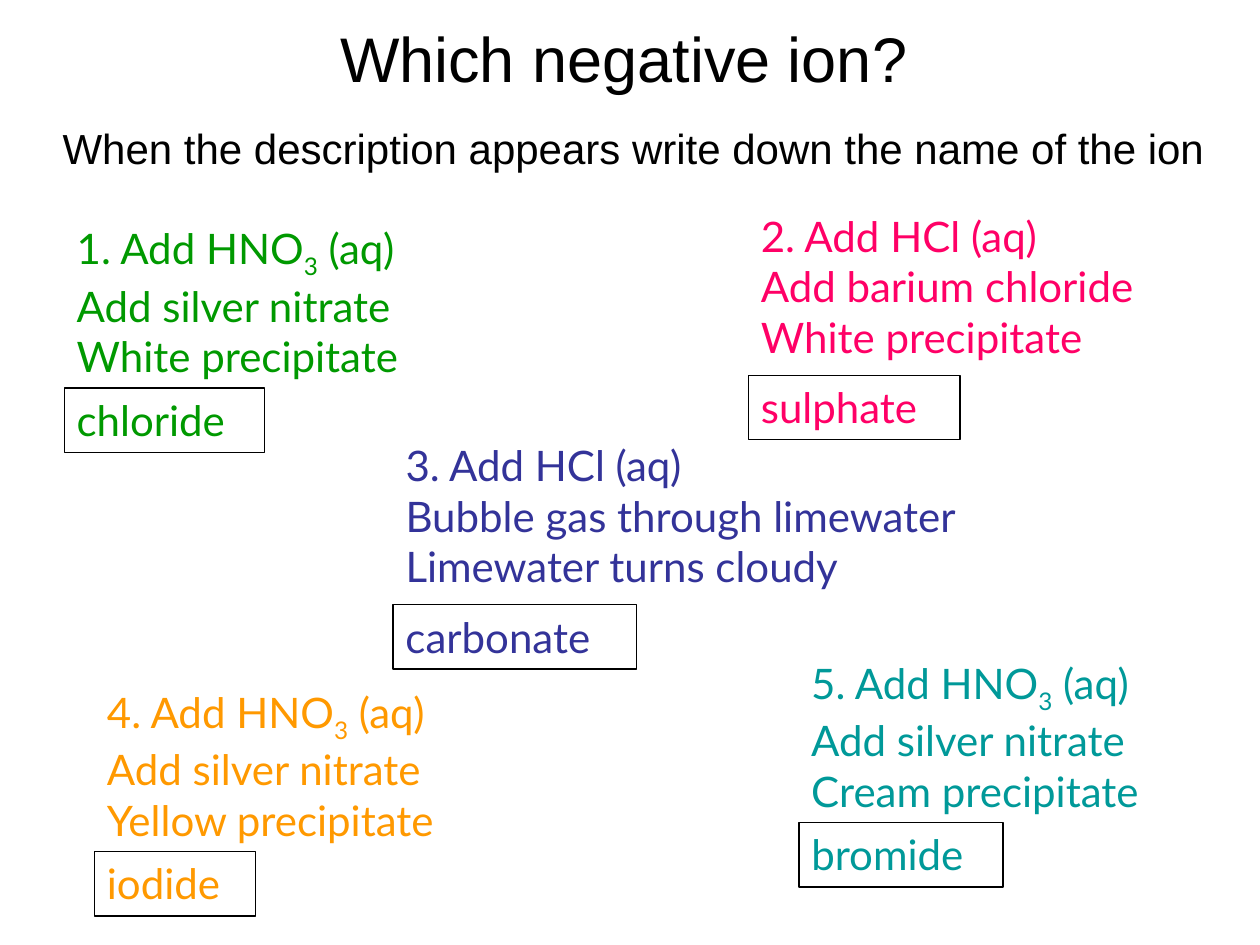
from dataclasses import dataclass

from pptx import Presentation
from pptx.dml.color import RGBColor
from pptx.enum.shapes import MSO_SHAPE
from pptx.enum.text import MSO_ANCHOR, PP_ALIGN
from pptx.util import Inches, Pt


@dataclass(frozen=True)
class Theme:
    black: RGBColor = RGBColor.from_string("000000")
    title_font: str = "Arial"
    body_font: str = "Lato"
    title_size: Pt = Pt(36)
    indent_size: Pt = Pt(40)
    body_size: Pt = Pt(24)
    outline: Pt = Pt(0.75)


THEME = Theme()
CLUE_HEIGHT = 1.31
ANSWER_OFFSET = 1.36
ANSWER_HEIGHT = 0.51
NITRIC_ACID = ("Add HNO", "3", " (aq)")
HYDROCHLORIC_ACID = ("Add HCl (aq)",)

# left, top, clue width, answer width, colour, acid, remaining clue lines, answer
QUESTIONS = [
    (0.51, 1.72, 3.19, 1.59, "009900", NITRIC_ACID,
     ("Add silver nitrate", "White precipitate"), "chloride"),
    (5.94, 1.62, 3.69, 1.68, "FF0066", HYDROCHLORIC_ACID,
     ("Add barium chloride", "White precipitate"), "sulphate"),
    (3.12, 3.44, 5.38, 1.93, "333399", HYDROCHLORIC_ACID,
     ("Bubble gas through limewater", "Limewater turns cloudy"), "carbonate"),
    (0.75, 5.4, 3.29, 1.28, "FF9900", NITRIC_ACID,
     ("Add silver nitrate", "Yellow precipitate"), "iodide"),
    (6.34, 5.17, 3.23, 1.62, "009999", NITRIC_ACID,
     ("Add silver nitrate", "Cream precipitate"), "bromide"),
]


def style(font, name, size, colour):
    font.name = name
    font.size = size
    font.color.rgb = colour


def add_title(page, left, top, width, height):
    box = page.shapes.add_textbox(Inches(left), Inches(top), Inches(width), Inches(height))
    frame = box.text_frame
    frame.word_wrap = True
    frame.vertical_anchor = MSO_ANCHOR.MIDDLE
    para = frame.paragraphs[0]
    para.alignment = PP_ALIGN.CENTER

    def add_span(text, size):
        span = para.add_run()
        span.text = text
        style(span.font, THEME.title_font, size, THEME.black)

    add_span("Which negative ion?", THEME.title_size)
    para.add_line_break()
    add_span(" ", THEME.indent_size)
    add_span("When the description appears write down the name of the ion", THEME.body_size)


def fill_lines(frame, lines, colour):
    """Write each line, a tuple of spans whose second one is a subscript."""
    frame.word_wrap = True
    for index, spans in enumerate(lines):
        para = frame.add_paragraph() if index else frame.paragraphs[0]
        para.alignment = PP_ALIGN.LEFT
        style(para.font, THEME.body_font, THEME.body_size, colour)
        for position, text in enumerate(spans):
            span = para.add_run()
            span.text = text
            if position == 1:
                span._r.get_or_add_rPr().set("baseline", "-25000")


def add_clue(page, left, top, width, lines, colour):
    box = page.shapes.add_textbox(
        Inches(left), Inches(top), Inches(width), Inches(CLUE_HEIGHT))
    fill_lines(box.text_frame, lines, colour)


def add_answer(page, left, top, width, answer, colour):
    box = page.shapes.add_shape(
        MSO_SHAPE.RECTANGLE, Inches(left), Inches(top), Inches(width), Inches(ANSWER_HEIGHT))
    box.shadow.inherit = False
    box.fill.background()
    box.line.color.rgb = THEME.black
    box.line.width = THEME.outline
    box.text_frame.vertical_anchor = MSO_ANCHOR.TOP
    fill_lines(box.text_frame, [(answer,)], colour)


def main():
    deck = Presentation()
    deck.slide_width, deck.slide_height = Inches(10), Inches(7.5)
    page = deck.slides.add_slide(deck.slide_layouts[6])
    add_title(page, 0.14, 0.16, 9.62, 1.25)
    for number, question in enumerate(QUESTIONS, start=1):
        left, top, clue_width, answer_width, code, acid, steps, answer = question
        colour = RGBColor.from_string(code)
        first_line = (f"{number}. {acid[0]}", *acid[1:])
        lines = [first_line, *((step,) for step in steps)]
        add_clue(page, left, top, clue_width, lines, colour)
        add_answer(page, left, top + ANSWER_OFFSET, answer_width, answer, colour)
    deck.save("out.pptx")


if __name__ == "__main__":
    main()
